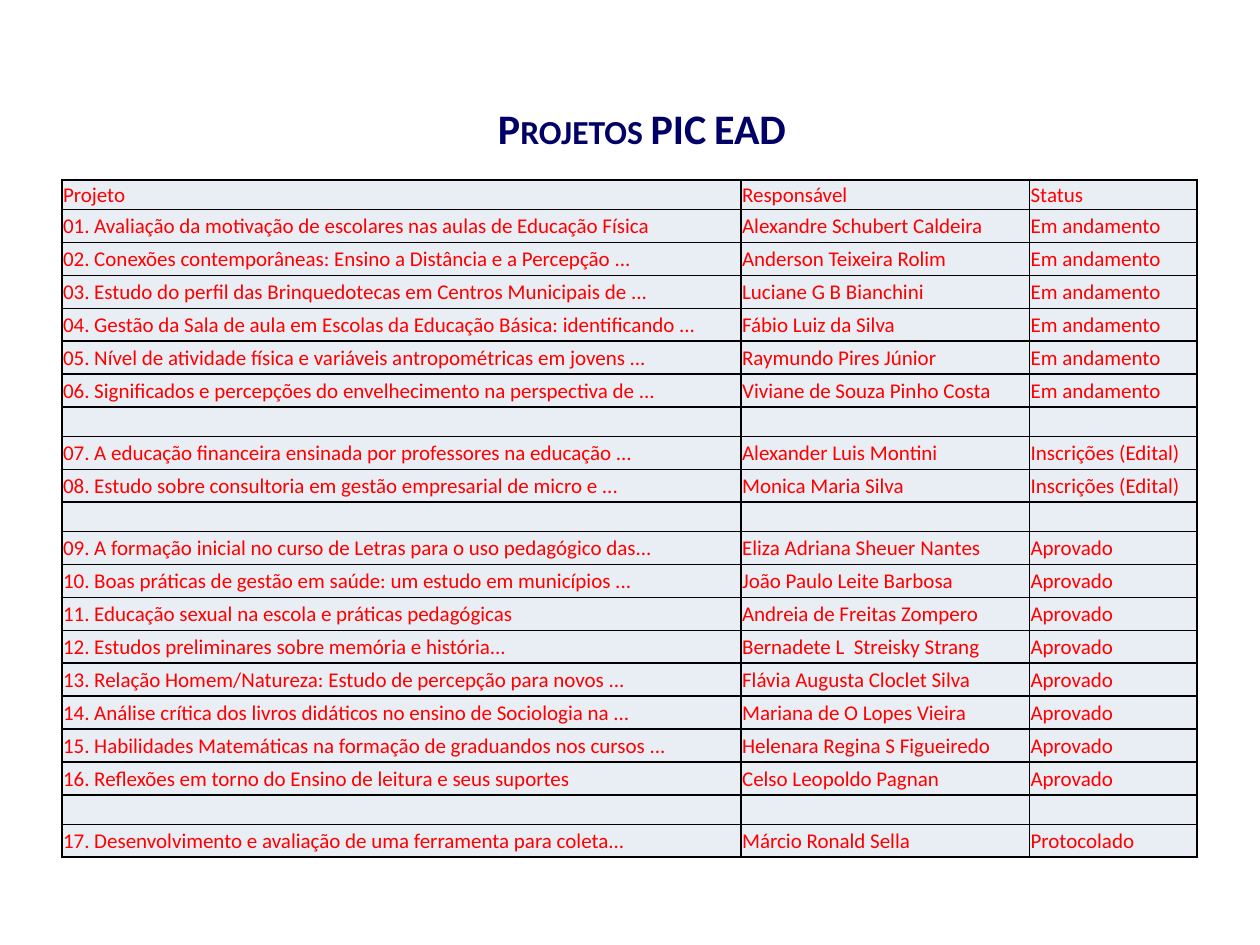
import pptx
import pptx.dml.color
import pptx.enum.text
import pptx.util
from pptx.oxml import parse_xml
from pptx.oxml.ns import nsdecls

COLORS = {"title": "000066", "text": "FF0000", "cell": "E9EDF4", "border": "000000"}
FONT = "Calibri"
SLIDE_SIZE = (10, 7.5)
TITLE_BOX = (0.69, 0.76, 8.81, 0.5)
TABLE_BOX = (0.49, 1.43, 9.01, 5.38)
COLUMN_WIDTHS = (5.39, 2.29, 1.33)
# Relative heights: text rows, and the shorter header and separator rows
TEXT_ROW, SHORT_ROW = 9, 8

HEADER = ("Projeto", "Responsável", "Status")
PROJECT_GROUPS = [
    [
        ("01. Avaliação da motivação de escolares nas aulas de Educação Física",
         "Alexandre Schubert Caldeira", "Em andamento"),
        ("02. Conexões contemporâneas: Ensino a Distância e a Percepção ...",
         "Anderson Teixeira Rolim", "Em andamento"),
        ("03. Estudo do perfil das Brinquedotecas em Centros Municipais de ...",
         "Luciane G B Bianchini", "Em andamento"),
        ("04. Gestão da Sala de aula em Escolas da Educação Básica: identificando ...",
         "Fábio Luiz da Silva", "Em andamento"),
        ("05. Nível de atividade física e variáveis antropométricas em jovens ...",
         "Raymundo Pires Júnior", "Em andamento"),
        ("06. Significados e percepções do envelhecimento na perspectiva de ...",
         "Viviane de Souza Pinho Costa", "Em andamento"),
    ],
    [
        ("07. A educação financeira ensinada por professores na educação ...",
         "Alexander Luis Montini", "Inscrições (Edital)"),
        ("08. Estudo sobre consultoria em gestão empresarial de micro e ...",
         "Monica Maria Silva", "Inscrições (Edital)"),
    ],
    [
        ("09. A formação inicial no curso de Letras para o uso pedagógico das...",
         "Eliza Adriana Sheuer Nantes", "Aprovado"),
        ("10. Boas práticas de gestão em saúde: um estudo em municípios ...",
         "João Paulo Leite Barbosa", "Aprovado"),
        ("11. Educação sexual na escola e práticas pedagógicas",
         "Andreia de Freitas Zompero", "Aprovado"),
        ("12. Estudos preliminares sobre memória e história...",
         "Bernadete L  Streisky Strang", "Aprovado"),
        ("13. Relação Homem/Natureza: Estudo de percepção para novos ...",
         "Flávia Augusta Cloclet Silva", "Aprovado"),
        ("14. Análise crítica dos livros didáticos no ensino de Sociologia na ...",
         "Mariana de O Lopes Vieira", "Aprovado"),
        ("15. Habilidades Matemáticas na formação de graduandos nos cursos ...",
         "Helenara Regina S Figueiredo", "Aprovado"),
        ("16. Reflexões em torno do Ensino de leitura e seus suportes",
         "Celso Leopoldo Pagnan", "Aprovado"),
    ],
    [
        ("17. Desenvolvimento e avaliação de uma ferramenta para coleta...",
         "Márcio Ronald Sella", "Protocolado"),
    ],
]


def inches(values):
    return [pptx.util.Inches(value) for value in values]


def write_text(text_frame, text, *, size, color, bold=False, small_caps=False,
               align=pptx.enum.text.PP_ALIGN.LEFT):
    paragraph = text_frame.paragraphs[0]
    paragraph.alignment = align
    if not text:
        # An empty line still needs its size, so that the row stays short
        paragraph._p.get_or_add_endParaRPr().set("sz", str(size * 100))
        return
    run = paragraph.add_run()
    run.text = text
    run.font.name = FONT
    run.font.size = pptx.util.Pt(size)
    run.font.bold = bold
    run.font.color.rgb = pptx.dml.color.RGBColor.from_string(COLORS[color])
    if small_caps:
        run.font._element.set("cap", "small")


def add_title(slide, box):
    title = slide.shapes.title
    title.left, title.top, title.width, title.height = inches(box)
    text_frame = title.text_frame
    text_frame.word_wrap = True
    text_frame.auto_size = pptx.enum.text.MSO_AUTO_SIZE.NONE
    text_frame.vertical_anchor = pptx.enum.text.MSO_ANCHOR.TOP
    write_text(text_frame, "Projetos PIC EAD", size=24, color="title", bold=True,
               small_caps=True, align=pptx.enum.text.PP_ALIGN.CENTER)


def format_cell(cell):
    cell.margin_left = cell.margin_right = cell.margin_top = pptx.util.Inches(0.01)
    cell.margin_bottom = 0
    cell.vertical_anchor = pptx.enum.text.MSO_ANCHOR.MIDDLE
    properties = cell._tc.get_or_add_tcPr()
    for side in ("lnL", "lnR", "lnT", "lnB"):
        properties.append(parse_xml(
            f'<a:{side} {nsdecls("a")} w="{pptx.util.Pt(1)}"><a:solidFill>'
            f'<a:srgbClr val="{COLORS["border"]}"/></a:solidFill></a:{side}>'))
    cell.fill.solid()
    cell.fill.fore_color.rgb = pptx.dml.color.RGBColor.from_string(COLORS["cell"])


def add_project_table(slide, box):
    # Header, then the groups with an empty row between them
    rows = [HEADER]
    for index, group in enumerate(PROJECT_GROUPS):
        if index:
            rows.append(("",) * len(HEADER))
        rows.extend(group)
    shares = [TEXT_ROW if row[0] and row is not HEADER else SHORT_ROW for row in rows]

    table = slide.shapes.add_table(len(rows), len(HEADER), *inches(box)).table
    for column, width in zip(table.columns, COLUMN_WIDTHS):
        column.width = pptx.util.Inches(box[2] * width / sum(COLUMN_WIDTHS))
    for table_row, texts, share in zip(table.rows, rows, shares):
        table_row.height = pptx.util.Inches(box[3] * share / sum(shares))
        for cell, text in zip(table_row.cells, texts):
            format_cell(cell)
            write_text(cell.text_frame, text, size=12, color="text")


def main():
    presentation = pptx.Presentation()
    presentation.slide_width, presentation.slide_height = inches(SLIDE_SIZE)
    title_only = presentation.slide_layouts[5]
    slide = presentation.slides.add_slide(title_only)
    add_title(slide, TITLE_BOX)
    add_project_table(slide, TABLE_BOX)
    presentation.save("out.pptx")


if __name__ == "__main__":
    main()
